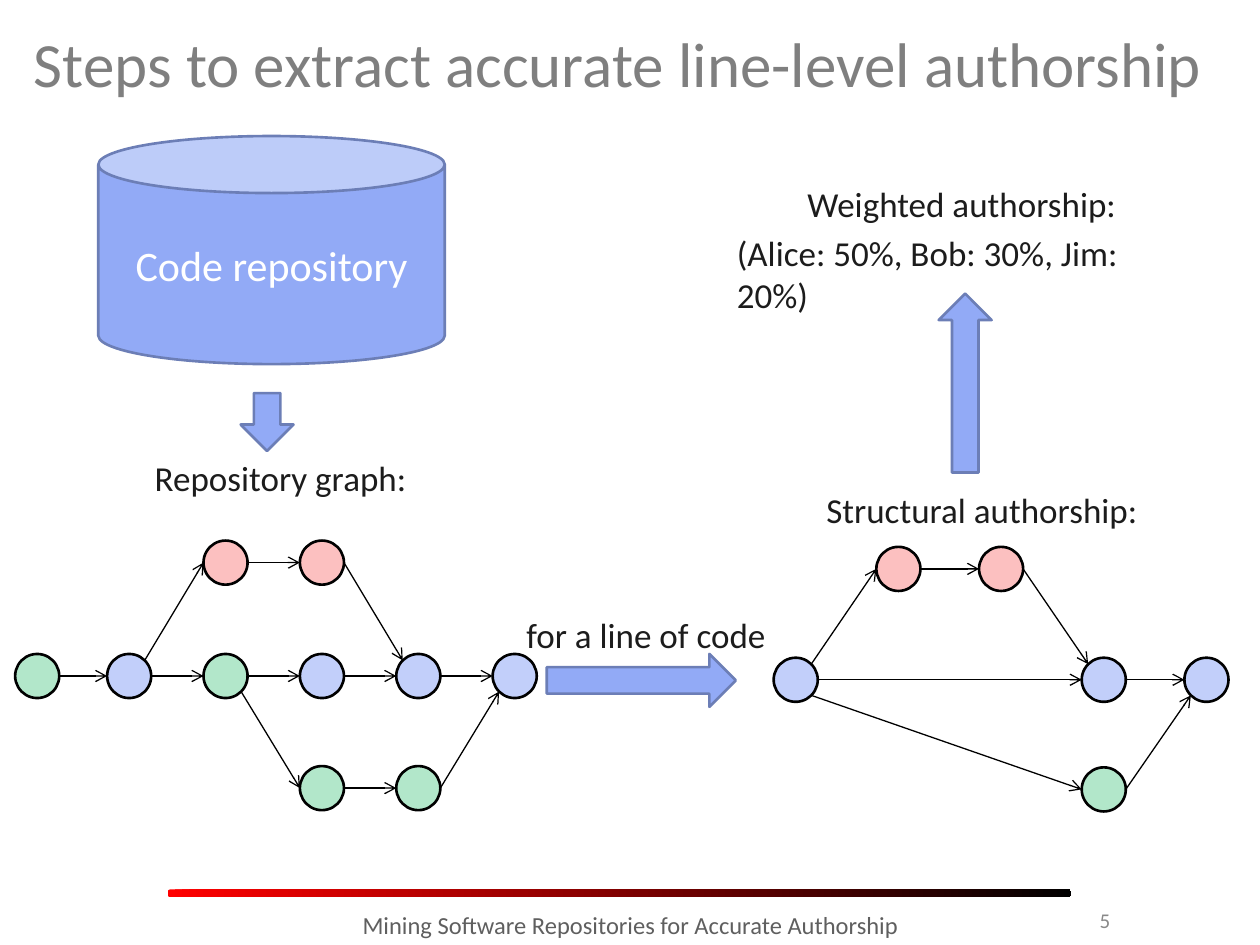
import math
from dataclasses import dataclass

import lxml.etree
import pptx
import pptx.dml.color
import pptx.enum.shapes
import pptx.enum.text
import pptx.oxml.ns
import pptx.util

Inches = pptx.util.Inches
Pt = pptx.util.Pt
SHAPE = pptx.enum.shapes.MSO_SHAPE
ALIGN = pptx.enum.text.PP_ALIGN
ANCHOR = pptx.enum.text.MSO_ANCHOR
qn = pptx.oxml.ns.qn


@dataclass(frozen=True)
class Theme:
    font: str = "Calibri"
    title_size: int = 36
    store_size: int = 24
    label_size: int = 20
    footer_size: int = 14
    number_size: int = 12
    title: str = "7F7F7F"
    label: str = "1C1C1C"
    footer: str = "5F5F5F"
    number: str = "898989"
    white: str = "FFFFFF"
    black: str = "000000"
    bar_start: str = "FF0000"
    block: str = "92AAF6"
    block_line: str = "6C7EB6"
    blue: tuple = ("3763EF", 30)
    green: tuple = ("00B050", 30)
    red: tuple = ("FA8282", 50)


THEME = Theme()
NODE_SIZE = 0.35
MAIN_ROW = 1


def rgb(value):
    return pptx.dml.color.RGBColor.from_string(value)


def style_paragraph(paragraph, size, color, align):
    paragraph.alignment = align
    paragraph.font.name = THEME.font
    paragraph.font.size = Pt(size)
    paragraph.font.color.rgb = rgb(color)


def add_text(slide, box, lines, size, color, align=ALIGN.LEFT, anchor=ANCHOR.TOP):
    frame = slide.shapes.add_textbox(*map(Inches, box)).text_frame
    frame.word_wrap = True
    frame.vertical_anchor = anchor
    frame.text = "\n".join(lines)
    for index, paragraph in enumerate(frame.paragraphs):
        style_paragraph(paragraph, size, color, align)
        if index:
            paragraph.space_before = Pt(size * 0.2)
    return frame


def add_shape(shapes, kind, box, fill, line, width=1.5):
    shape = shapes.add_shape(kind, *map(Inches, box))
    shape.shadow.inherit = False
    shape.fill.solid()
    shape.fill.fore_color.rgb = rgb(fill)
    shape.line.color.rgb = rgb(line)
    shape.line.width = Pt(width)
    return shape


def add_block_arrow(slide, box, rotation=0):
    arrow = add_shape(slide.shapes, SHAPE.DOWN_ARROW, box, THEME.block, THEME.block_line)
    arrow.rotation = rotation


def add_repository(slide):
    store = add_shape(slide.shapes, SHAPE.CAN, (0.78, 1.08, 2.75, 1.81),
                      THEME.block, THEME.block_line)
    store.text_frame.text = "Code repository"
    store.text_frame.vertical_anchor = ANCHOR.MIDDLE
    style_paragraph(store.text_frame.paragraphs[0], THEME.store_size, THEME.white, ALIGN.CENTER)


def add_node(shapes, left, top, tint):
    color, opacity = tint
    node = add_shape(shapes, SHAPE.OVAL, (left, top, NODE_SIZE, NODE_SIZE), color, THEME.black)
    srgb = node.fill._xPr.find(qn("a:solidFill")).find(qn("a:srgbClr"))
    lxml.etree.SubElement(srgb, qn("a:alpha")).set("val", str(opacity * 1000))


def add_edge(shapes, start, end):
    edge = shapes.add_connector(pptx.enum.shapes.MSO_CONNECTOR.STRAIGHT,
                                *map(Inches, start + end))
    edge.line.color.rgb = rgb(THEME.black)
    edge.line.width = Pt(0.75)
    lxml.etree.SubElement(edge.line._get_or_add_ln(), qn("a:tailEnd")).set("type", "arrow")
    lxml.etree.SubElement(edge._element.spPr, qn("a:effectLst"))


def edge_ends(columns, rows, source, target):
    def rim(cell, degrees):
        column, row = cell
        radius = NODE_SIZE / 2
        angle = math.radians(degrees)
        return (columns[column] + radius * (1 + math.cos(angle)),
                rows[row] + radius * (1 + math.sin(angle)))

    slope = 45 * ((target[1] > source[1]) - (target[1] < source[1]))
    leaves_main = source[1] == MAIN_ROW
    return (rim(source, slope if leaves_main else 0),
            rim(target, 180 if leaves_main else 180 + slope))


def add_graph(slide, columns, rows, nodes, edges):
    shapes = slide.shapes.add_group_shape().shapes
    for source, target in edges:
        add_edge(shapes, *edge_ends(columns, rows, source, target))
    for (column, row), tint in nodes.items():
        add_node(shapes, columns[column], rows[row], tint)


def add_repository_graph(slide):
    blue, green, red = THEME.blue, THEME.green, THEME.red
    columns = [0.12] + [0.85 + 0.765 * step for step in range(5)]
    nodes = {(column, MAIN_ROW): tint
             for column, tint in enumerate((green, blue, green, blue, blue, blue))}
    nodes.update({(2, 0): red, (3, 0): red, (3, 2): green, (4, 2): green})
    edges = [((column, MAIN_ROW), (column + 1, MAIN_ROW)) for column in range(5)]
    edges += [((1, 1), (2, 0)), ((2, 0), (3, 0)), ((3, 0), (4, 1)),
              ((2, 1), (3, 2)), ((3, 2), (4, 2)), ((4, 2), (5, 1))]
    add_graph(slide, columns, (4.29, 5.19, 6.08), nodes, edges)


def add_authorship_graph(slide):
    blue, green, red = THEME.blue, THEME.green, THEME.red
    columns = [6.14 + 0.815 * step for step in range(5)]
    nodes = {(0, 1): blue, (3, 1): blue, (4, 1): blue,
             (1, 0): red, (2, 0): red, (3, 2): green}
    edges = [((0, 1), (3, 1)), ((3, 1), (4, 1)),
             ((0, 1), (1, 0)), ((1, 0), (2, 0)), ((2, 0), (3, 1)),
             ((0, 1), (3, 2)), ((3, 2), (4, 1))]
    add_graph(slide, columns, (4.34, 5.22, 6.09), nodes, edges)


def add_footer(slide):
    bar = add_shape(slide.shapes, SHAPE.ROUNDED_RECTANGLE, (1.33, 7.06, 7.17, 0.06),
                    THEME.black, THEME.black)
    bar.adjustments[0] = 0.33
    bar.line.fill.background()
    bar.fill.gradient()
    bar.fill.gradient_angle = 0
    for stop, color in zip(bar.fill.gradient_stops, (THEME.bar_start, THEME.black)):
        stop.color.rgb = rgb(color)
    add_text(slide, (7.58, 7.1, 1.33, 0.4), ["5"], THEME.number_size, THEME.number,
             ALIGN.RIGHT, ANCHOR.MIDDLE)
    add_text(slide, (2.42, 7.17, 5.17, 0.4),
             ["Mining Software Repositories for Accurate Authorship"],
             THEME.footer_size, THEME.footer, ALIGN.CENTER)


def add_labels(slide):
    for box, label in (((1.13, 3.57, 2.23, 0.51), "Repository graph:"),
                       ((6.46, 3.83, 2.77, 0.51), "Structural authorship:"),
                       ((4.08, 4.82, 2.3, 0.51), "for a line of code")):
        add_text(slide, box, [label], THEME.label_size, THEME.label)
    weights = add_text(slide, (5.75, 1.4, 3.77, 0.92),
                       ["Weighted authorship:", "(Alice: 50%, Bob: 30%, Jim: 20%)"],
                       THEME.label_size, THEME.label)
    heading = weights.paragraphs[0]._p.get_or_add_pPr()
    heading.set("marL", "0")
    heading.set("indent", str(Inches(0.56)))


def main():
    deck = pptx.Presentation()
    deck.slide_width, deck.slide_height = Inches(10), Inches(7.5)
    slide = deck.slides.add_slide(deck.slide_layouts[6])
    add_footer(slide)
    add_text(slide, (0.17, 0.08, 9.67, 0.83),
             ["Steps to extract accurate line-level authorship"],
             THEME.title_size, THEME.title, anchor=ANCHOR.MIDDLE)
    add_block_arrow(slide, (1.91, 3.12, 0.42, 0.46))
    add_block_arrow(slide, (4.88, 4.65, 0.42, 1.5), 270)
    add_block_arrow(slide, (7.45, 2.33, 0.42, 1.42), 180)
    add_labels(slide)
    add_repository(slide)
    add_repository_graph(slide)
    add_authorship_graph(slide)
    deck.save("out.pptx")


if __name__ == "__main__":
    main()
